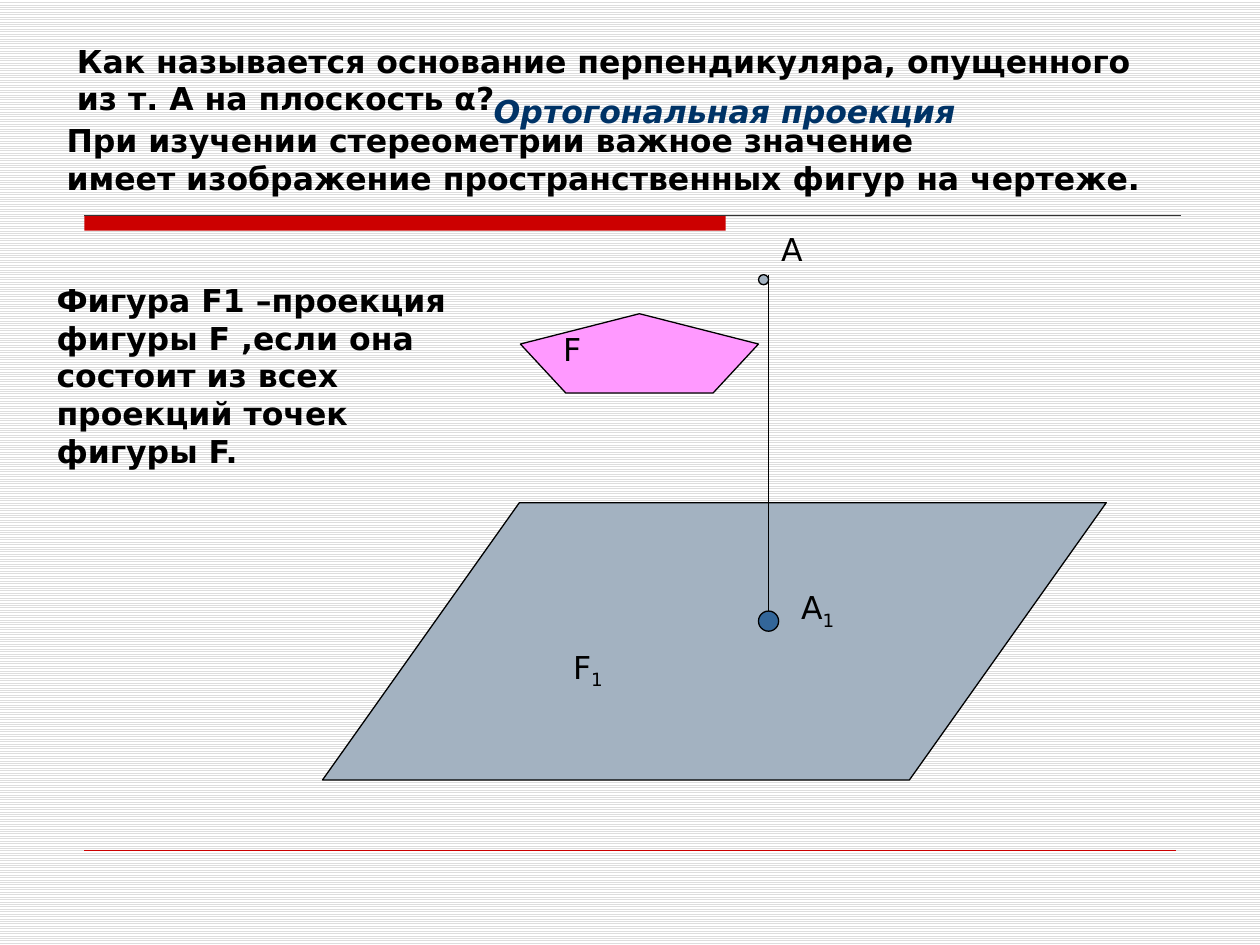
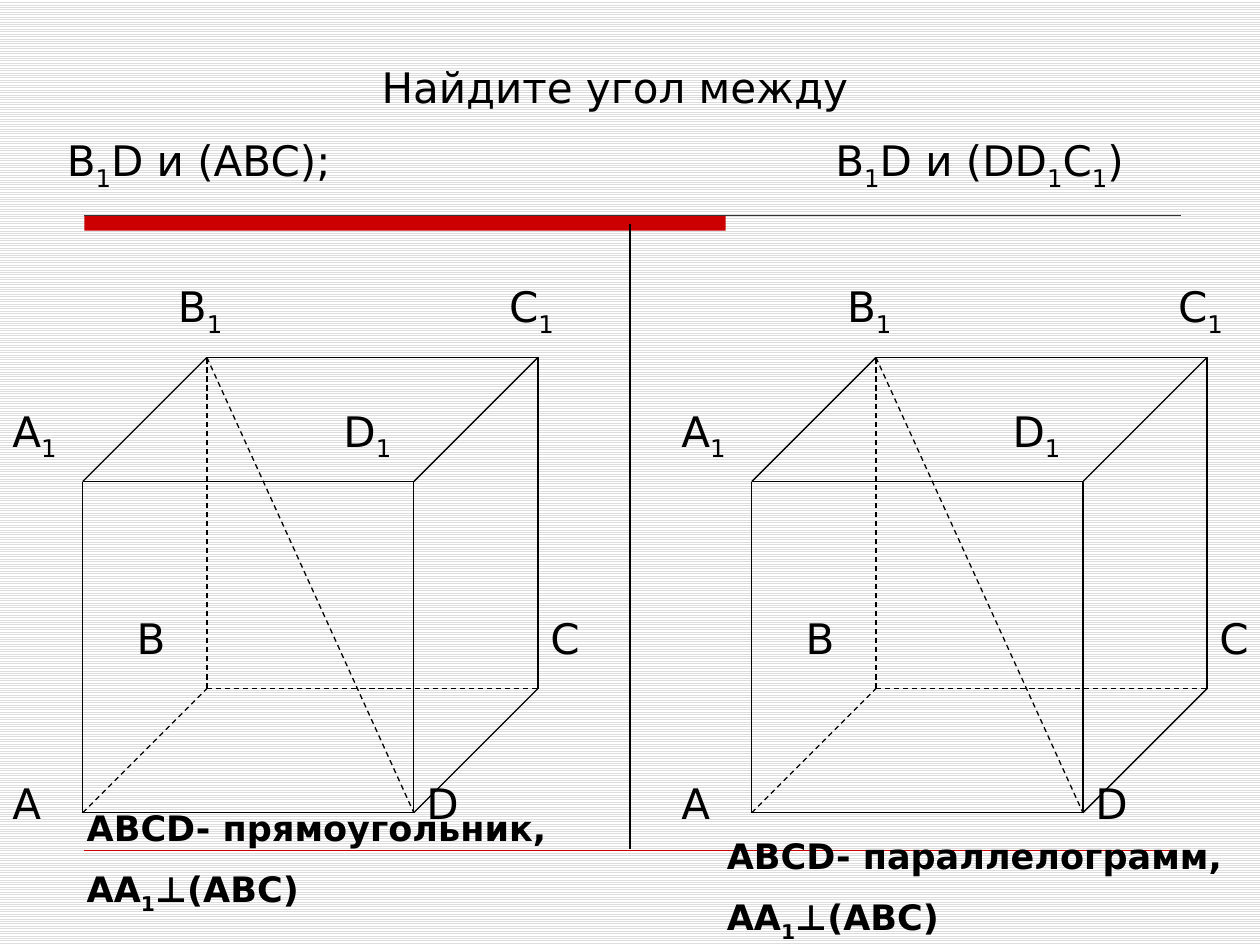
from dataclasses import dataclass

from lxml import etree
from pptx import Presentation
from pptx import util as u
from pptx.dml.color import RGBColor
from pptx.enum import dml, shapes, text
from pptx.oxml.ns import qn

FONT = "DejaVu Sans"
BLACK = RGBColor(0x00, 0x00, 0x00)
WHITE = RGBColor(0xFF, 0xFF, 0xFF)
STRIPE = RGBColor(0xDD, 0xDD, 0xDD)
RED = RGBColor(0xCC, 0x00, 0x00)
RULE = RGBColor(0x33, 0x33, 0x33)
NAVY = RGBColor(0x00, 0x33, 0x66)
BLUE = RGBColor(0x33, 0x66, 0x99)
PLANE = RGBColor(0xA3, 0xB2, 0xC1)
PINK = RGBColor(0xFF, 0x99, 0xFF)

COLUMNS, ROWS = 100, 75
CELL = u.Inches(0.1)
TITLE_ONLY = 5
SHAPE = shapes.MSO_SHAPE

CUBE_CELLS = 13
VERTICES = {
    "А": (2, 13), "В": (5, 10), "С": (13, 10), "D": (10, 13),
    "А_1": (2, 5), "В_1": (5, 2), "С_1": (13, 2), "D_1": (10, 5),
}
LABELS = {
    "А": (0, 12), "В": (3, 8), "С": (13, 8), "D": (10, 12),
    "А_1": (0, 3), "В_1": (4, 0), "С_1": (12, 0), "D_1": (8, 3),
}
SOLID_EDGES = [
    ("В_1", "С_1"), ("А_1", "D_1"), ("А_1", "В_1"), ("D_1", "С_1"), ("А", "D"),
    ("D", "С"), ("А", "А_1"), ("С", "С_1"), ("D", "D_1"),
]
DASHED_EDGES = [("В", "С"), ("А", "В"), ("В", "В_1"), ("В_1", "D")]


@dataclass
class Box:
    """A region of the slide, measured in grid cells."""

    left: float
    top: float
    width: float
    height: float

    def inside(self, left, top, width, height):
        """Return a box placed relative to this one."""
        return Box(self.left + left, self.top + top, width, height)

    def point(self, x, y):
        """Return the slide position of a point given relative to the box."""
        return int((self.left + x) * CELL), int((self.top + y) * CELL)

    def frame(self):
        """Return left, top, width and height as slide lengths."""
        return (*self.point(0, 0), int(self.width * CELL), int(self.height * CELL))


def write(shape, *lines, size=18, bold=False, italic=False, color=BLACK,
          aligns=(), spacing=0.0, wrap=True):
    """Fill a shape with paragraphs; an underscore lowers the next character."""
    frame = shape.text_frame
    frame.word_wrap = wrap
    frame.auto_size = text.MSO_AUTO_SIZE.NONE
    frame.vertical_anchor = text.MSO_ANCHOR.TOP
    for index, line in enumerate(lines):
        paragraph = frame.add_paragraph() if index else frame.paragraphs[0]
        paragraph.alignment = aligns[index] if aligns else text.PP_ALIGN.LEFT
        paragraph.space_before = u.Pt(round(size * spacing) if index else 0)
        first, *lowered = line.split("_")
        pieces = [(first, False)]
        for part in lowered:
            pieces += [(part[0], True), (part[1:], False)]
        for piece, is_subscript in pieces:
            if piece:
                run = paragraph.add_run()
                run.text = piece
                font = run.font
                font.name, font.size = FONT, u.Pt(size)
                font.bold, font.italic = bold, italic
                font.color.rgb = color
                if is_subscript:
                    run._r.get_or_add_rPr().set("baseline", "-25000")
    return shape


def add_text(parent, box, *lines, **style):
    """Add a text box."""
    return write(parent.shapes.add_textbox(*box.frame()), *lines, **style)


def set_title(slide, box, *lines, **style):
    """Move the title placeholder into the box and fill it."""
    title = slide.shapes.title
    title.left, title.top, title.width, title.height = box.frame()
    return write(title, *lines, **style)


def add_figure(slide, kind, box, fill, line=BLACK):
    """Add a filled preset shape, outlined unless line is None."""
    shape = slide.shapes.add_shape(kind, *box.frame())
    shape.shadow.inherit = False
    shape.fill.solid()
    shape.fill.fore_color.rgb = fill
    if line is None:
        shape.line.fill.background()
    else:
        shape.line.color.rgb = line
        shape.line.width = u.Pt(0.75)
    return shape


def add_line(parent, start, end, color=BLACK, width=0.75, dashed=False):
    """Add a straight line without a shadow."""
    line = parent.shapes.add_connector(shapes.MSO_CONNECTOR.STRAIGHT, *start, *end)
    line.line.color.rgb = color
    line.line.width = u.Pt(width)
    if dashed:
        line.line.dash_style = dml.MSO_LINE.DASH
    etree.SubElement(line._element.spPr, qn("a:effectLst"))
    return line


def set_background(presentation):
    """Give the slide master its striped background."""
    fill = presentation.slide_master.background.fill
    fill.patterned()
    fill.pattern = dml.MSO_PATTERN.LIGHT_HORIZONTAL
    fill.fore_color.rgb = STRIPE
    fill.back_color.rgb = WHITE


def add_slide(presentation):
    """Add a slide with the red band, its rule and the footer line."""
    slide = presentation.slides.add_slide(presentation.slide_layouts[TITLE_ONLY])
    area = Box(6.7, 17.1, 87, 50.4)
    add_figure(slide, SHAPE.RECTANGLE, area.inside(0, 0, 50.9, 1.2), RED, line=None)
    add_line(slide, area.point(0, 0), area.point(area.width, 0), RULE)
    add_line(slide, area.point(0, area.height), area.point(86.6, area.height), RED, 0.25)
    return slide


def add_question(slide, box):
    """Place the question, its answer and the remark below."""
    set_title(slide, box.inside(0.8, 0, 88.2, 7),
              "Как называется основание перпендикуляра, опущенного "
              "из т. А на плоскость α?", bold=True)
    add_text(slide, box.inside(33.9, 4, 44.9, 4), "Ортогональная проекция",
             bold=True, italic=True, color=NAVY)
    add_text(slide, box.inside(0, 6.3, 88.1, 7),
             "При изучении стереометрии важное значение",
             "имеет изображение пространственных фигур на чертеже.",
             bold=True, wrap=False)


def add_projection(slide, box):
    """Draw the plane, the perpendicular and the projected figure."""
    plane = add_figure(slide, SHAPE.PARALLELOGRAM, box.inside(0, 22.1, 62.2, 22), PLANE)
    plane.adjustments[0] = 0.71
    add_figure(slide, SHAPE.FLOWCHART_CONNECTOR, box.inside(34.6, 4, 0.8, 0.8), PLANE)
    foot = add_figure(slide, SHAPE.FLOWCHART_CONNECTOR,
                      box.inside(34.6, 30.7, 1.6, 1.6), BLUE)
    perpendicular = add_line(slide, box.point(35.4, 4), box.point(35.4, 30.7))
    perpendicular.end_connect(foot, 0)
    add_figure(slide, SHAPE.REGULAR_PENTAGON, box.inside(15.7, 7.1, 18.9, 6.3), PINK)
    for label, x, y in (("А", 35.4, 0), ("А_1", 37, 28.4),
                        ("F", 18.1, 7.9), ("F_1", 18.9, 33.1)):
        add_text(slide, box.inside(x, y, 5.5, 4), label)


def add_cube(slide, box):
    """Draw a labelled cube with its diagonal as one group."""
    group = slide.shapes.add_group_shape()
    cell = box.width / CUBE_CELLS
    for edges, dashed in ((SOLID_EDGES, False), (DASHED_EDGES, True)):
        for edge in edges:
            start, end = (box.point(*(cell * n for n in VERTICES[name])) for name in edge)
            add_line(group, start, end, dashed=dashed)
    for name, (x, y) in LABELS.items():
        width = 2 if "_" in name else 1.2
        label = add_text(group, box.inside(x * cell, y * cell, width * cell, 2 * cell),
                         name, size=24)
        label.text_frame.margin_right = 0


def add_task_title(slide, box):
    """Place the heading with one task at each side."""
    title = set_title(slide, box, "Найдите угол между",
                      "В_1D и (ABC);\tВ_1D и (DD_1C_1)", size=24, spacing=0.54,
                      aligns=(text.PP_ALIGN.CENTER, text.PP_ALIGN.LEFT))
    properties = title.text_frame.paragraphs[1]._p.get_or_add_pPr()
    tabs = etree.SubElement(properties, qn("a:tabLst"))
    etree.SubElement(tabs, qn("a:tab"), pos=str(u.Inches(6.1)), algn="l")


def build_projection_slide(presentation):
    """Build the slide about orthogonal projection."""
    slide = add_slide(presentation)
    add_question(slide, Box(4.3, 2.8, 89, 13.3))
    add_text(slide, Box(3.5, 21.8, 33.1, 16),
             "Фигура F1 –проекция фигуры F ,если она состоит "
             "из всех проекций точек фигуры F.", bold=True)
    add_projection(slide, Box(25.6, 17.8, 62.2, 44.1))


def build_angle_slide(presentation):
    """Build the slide with two cubes and their conditions."""
    slide = add_slide(presentation)
    add_task_title(slide, Box(4.3, 4.4, 89, 11))
    for left in (0, 53.1):
        add_cube(slide, Box(left, 21.8, 42.7, 42.7))
    add_line(slide, Box(50, 17.8, 0, 0).point(0, 0), Box(50, 67.4, 0, 0).point(0, 0))
    for left, top, base in ((5.9, 63.5, "прямоугольник"), (56.7, 65.7, "параллелограмм")):
        add_text(slide, Box(left, top, 43.3, 9.3), f"АВСD- {base},", "АА_1⊥(АВС)",
                 size=20, bold=True, spacing=0.54)


def main():
    """Build and save the presentation."""
    presentation = Presentation()
    presentation.slide_width = COLUMNS * CELL
    presentation.slide_height = ROWS * CELL
    set_background(presentation)
    build_projection_slide(presentation)
    build_angle_slide(presentation)
    presentation.save("out.pptx")


if __name__ == "__main__":
    main()
